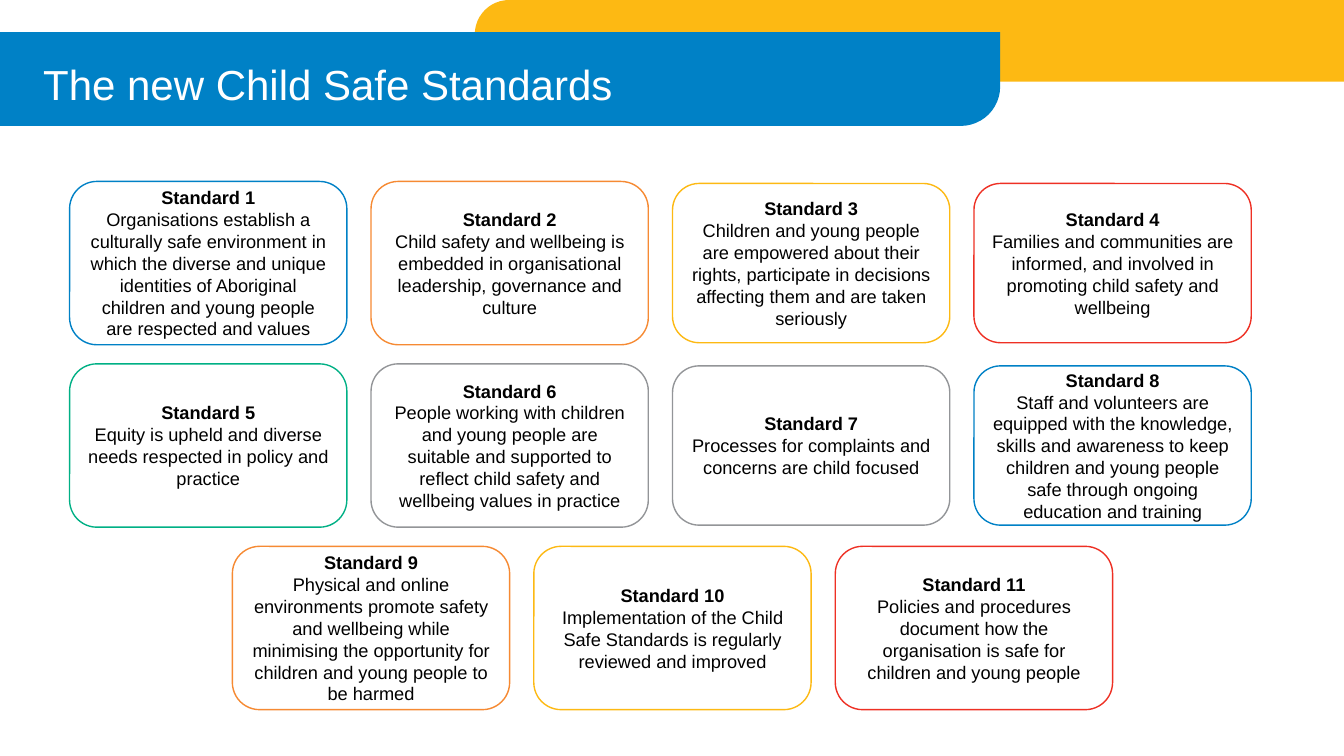
from dataclasses import dataclass

import pptx
import pptx.dml.color
import pptx.enum.shapes
import pptx.enum.text
import pptx.util

SHAPE = pptx.enum.shapes.MSO_SHAPE
ALIGN = pptx.enum.text.PP_ALIGN
MIDDLE = pptx.enum.text.MSO_ANCHOR.MIDDLE

BLUE, YELLOW, ORANGE, RED = "0081C6", "FDB913", "F68A33", "EE3024"
GREEN, GREY = "00B085", "939598"
FONT = "Arial"

# Card grid, in inches: first column's left edge, first row's centre, pitches
GRID_LEFT, COL_PITCH = 0.69, 2.99
GRID_MIDDLE, ROW_PITCH = 2.61, 1.81
CARD_W, TALL, SHORT = 2.75, 1.62, 1.58
LAST_ROW_SHIFT = 0.54


@dataclass
class Band:
    left: float
    top: float
    width: float
    height: float
    color: str
    flip: str


@dataclass
class Standard:
    number: int
    color: str
    text: str
    height: float = TALL

    @property
    def row(self) -> int:
        return (self.number - 1) // 4

    @property
    def col(self) -> float:
        shift = LAST_ROW_SHIFT if self.row == 2 else 0
        return (self.number - 1) % 4 + shift


BANDS = [
    Band(4.71, 0, 8.64, 0.81, YELLOW, "flipH"),
    Band(0, 0.32, 9.92, 0.93, BLUE, "flipV"),
]

STANDARDS = [
    Standard(1, BLUE, "Organisations establish a culturally safe environment in which the "
             "diverse and unique identities of Aboriginal children and young people are "
             "respected and values"),
    Standard(2, ORANGE, "Child safety and wellbeing is embedded in organisational leadership, "
             "governance and culture"),
    Standard(3, YELLOW, "Children and young people are empowered about their rights, "
             "participate in decisions affecting them and are taken seriously", SHORT),
    Standard(4, RED, "Families and communities are informed, and involved in promoting "
             "child safety and wellbeing", SHORT),
    Standard(5, GREEN, "Equity is upheld and diverse needs respected in policy and practice"),
    Standard(6, GREY, "People working with children and young people are suitable and "
             "supported to reflect child safety and wellbeing values in practice"),
    Standard(7, GREY, "Processes for complaints and concerns are child focused", SHORT),
    Standard(8, BLUE, "Staff and volunteers are equipped with the knowledge, skills and "
             "awareness to keep children and young people safe through ongoing education "
             "and training", SHORT),
    Standard(9, ORANGE, "Physical and online environments promote safety and wellbeing while "
             "minimising the opportunity for children and young people to be harmed"),
    Standard(10, YELLOW, "Implementation of the Child Safe Standards is regularly reviewed "
             "and improved"),
    Standard(11, RED, "Policies and procedures document how the organisation is safe for "
             "children and young people"),
]


def rgb(color: str) -> pptx.dml.color.RGBColor:
    return pptx.dml.color.RGBColor.from_string(color)


def box(*inches: float) -> list:
    return [pptx.util.Inches(n) for n in inches]


def style(p, size: float, color: str, bold: bool = False) -> None:
    p.font.name = FONT
    p.font.size = pptx.util.Pt(size)
    p.font.bold = bold
    p.font.color.rgb = rgb(color)


def draw_band(slide, band: Band) -> None:
    s = slide.shapes.add_shape(SHAPE.ROUND_1_RECTANGLE,
                               *box(band.left, band.top, band.width, band.height))
    s.adjustments[0] = 0.42
    s.shadow.inherit = False
    s.fill.solid()
    s.fill.fore_color.rgb = rgb(band.color)
    s.line.fill.background()
    s._element.spPr.xfrm.set(band.flip, "1")


def draw_title(slide, text: str) -> None:
    tf = slide.shapes.add_textbox(*box(0.33, 0.32, 10.62, 1.09)).text_frame
    tf.word_wrap = True
    tf.vertical_anchor = MIDDLE
    p = tf.paragraphs[0]
    p.text = text
    p.line_spacing = 0.9
    style(p, 30, "FFFFFF")


def draw_standard(slide, std: Standard) -> None:
    left = GRID_LEFT + std.col * COL_PITCH
    top = GRID_MIDDLE + std.row * ROW_PITCH - std.height / 2
    s = slide.shapes.add_shape(SHAPE.ROUNDED_RECTANGLE, *box(left, top, CARD_W, std.height))
    s.shadow.inherit = False
    s.fill.background()
    s.line.color.rgb = rgb(std.color)
    s.line.width = pptx.util.Pt(1)
    tf = s.text_frame
    tf.word_wrap = True
    tf.vertical_anchor = MIDDLE
    tf.text = f"Standard {std.number}\n{std.text}"
    for i, p in enumerate(tf.paragraphs):
        p.alignment = ALIGN.CENTER
        style(p, 13, "000000", bold=i == 0)


def main() -> None:
    prs = pptx.Presentation()
    prs.slide_width, prs.slide_height = box(13.33, 7.5)
    slide = prs.slides.add_slide(prs.slide_layouts[6])

    # Header
    for band in BANDS:
        draw_band(slide, band)
    draw_title(slide, "The new Child Safe Standards")

    # Cards
    for std in STANDARDS:
        draw_standard(slide, std)

    prs.save("out.pptx")


if __name__ == "__main__":
    main()
